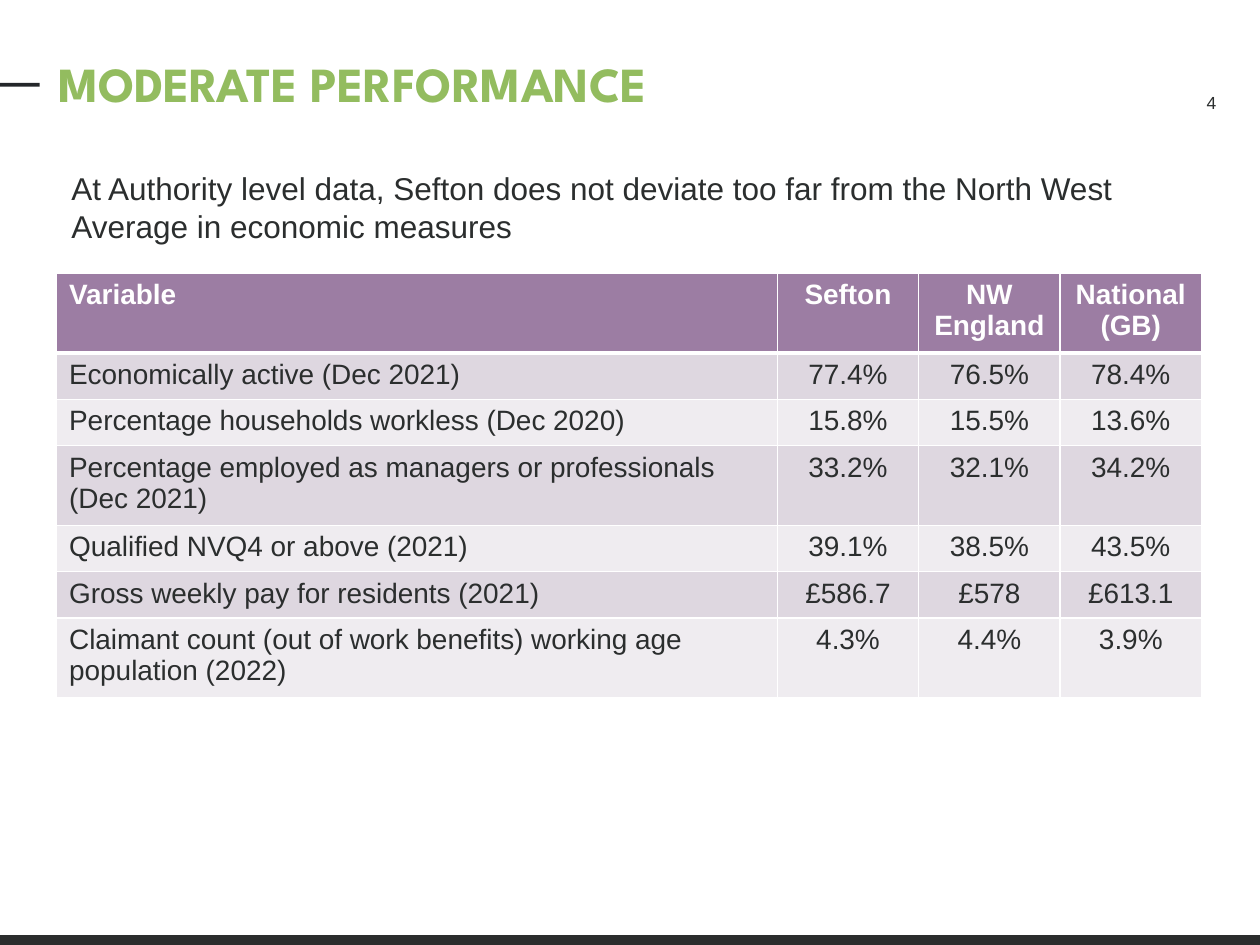
from lxml import etree
from pptx import Presentation
from pptx.dml.color import RGBColor
from pptx.enum import shapes, text
from pptx.oxml import ns
from pptx.util import Cm, Pt

WHITE = RGBColor(0xFF, 0xFF, 0xFF)
INK = RGBColor(0x2B, 0x2E, 0x2E)
DASH = RGBColor(0x24, 0x27, 0x2A)
FOOTER = RGBColor(0x2B, 0x2D, 0x2D)
GREEN = RGBColor(0x93, 0xBC, 0x5F)
PURPLE = RGBColor(0x9C, 0x7D, 0xA3)
LILAC = RGBColor(0xDE, 0xD7, 0xE0)
PALE = RGBColor(0xEF, 0xEC, 0xF0)

MEASURES = [
    ("Variable", "Sefton", "NW England", "National (GB)"),
    ("Economically active (Dec 2021)", "77.4%", "76.5%", "78.4%"),
    ("Percentage households workless (Dec 2020)", "15.8%", "15.5%", "13.6%"),
    ("Percentage employed as managers or professionals (Dec 2021)",
     "33.2%", "32.1%", "34.2%"),
    ("Qualified NVQ4 or above (2021)", "39.1%", "38.5%", "43.5%"),
    ("Gross weekly pay for residents (2021)", "£586.7", "£578", "£613.1"),
    ("Claimant count (out of work benefits) working age population (2022)",
     "4.3%", "4.4%", "3.9%"),
]
COLUMN_WIDTHS = [14.53, 2.85, 2.85, 2.85]
ROW_HEIGHTS = [1.5, 0.88, 0.88, 1.5, 0.88, 0.88, 1.5]


def write(frame, words, size, color, align=text.PP_ALIGN.LEFT,
          font="Arial", bold=False):
    paragraph = frame.paragraphs[0]
    paragraph.alignment = align
    run = paragraph.add_run()
    run.text = words
    run.font.name = font
    run.font.size = Pt(size)
    run.font.bold = bold
    run.font.color.rgb = color


def add_title(slide, words):
    title = slide.shapes.title
    title.left, title.top = Cm(1.17), Cm(1.07)
    title.width, title.height = Cm(17.88), Cm(1.19)
    frame = title.text_frame
    frame.margin_left = frame.margin_right = 0
    frame.margin_top = frame.margin_bottom = 0
    frame.vertical_anchor = text.MSO_ANCHOR.MIDDLE
    write(frame, words, 28, GREEN, font="League Spartan", bold=True)


def add_bar(slide, left, top, width, height, color):
    bar = slide.shapes.add_shape(shapes.MSO_SHAPE.RECTANGLE,
                                 Cm(left), Cm(top), Cm(width), Cm(height))
    bar.shadow.inherit = False
    bar.fill.solid()
    bar.fill.fore_color.rgb = color
    bar.line.fill.background()


def add_label(slide, left, top, width, height, words, size,
              align=text.PP_ALIGN.LEFT):
    label = slide.shapes.add_textbox(Cm(left), Cm(top), Cm(width), Cm(height))
    label.text_frame.word_wrap = True
    write(label.text_frame, words, size, INK, align)


def set_borders(cell, bottom):
    properties = cell._tc.get_or_add_tcPr()
    widths = {"lnL": 1, "lnR": 1, "lnT": 1, "lnB": bottom}
    for position, (side, points) in enumerate(widths.items()):
        line = etree.Element(ns.qn(f"a:{side}"), w=str(Pt(points)))
        fill = etree.SubElement(line, ns.qn("a:solidFill"))
        etree.SubElement(fill, ns.qn("a:srgbClr"), val=str(WHITE))
        properties.insert(position, line)


def add_measures(slide):
    frame = slide.shapes.add_table(
        len(MEASURES), len(COLUMN_WIDTHS), Cm(1.14), Cm(5.51),
        Cm(sum(COLUMN_WIDTHS)), Cm(sum(ROW_HEIGHTS)))
    table = frame.table
    for column, width in zip(table.columns, COLUMN_WIDTHS):
        column.width = Cm(width)
    for row, height in zip(table.rows, ROW_HEIGHTS):
        row.height = Cm(height)
    for r, measure in enumerate(MEASURES):
        header = r == 0
        shade = PURPLE if header else (LILAC if r % 2 else PALE)
        for c, words in enumerate(measure):
            cell = table.cell(r, c)
            cell.fill.solid()
            cell.fill.fore_color.rgb = shade
            set_borders(cell, 3 if header else 1)
            write(cell.text_frame, words, 16, WHITE if header else INK,
                  text.PP_ALIGN.CENTER if c else text.PP_ALIGN.LEFT,
                  bold=header)


def main():
    deck = Presentation()
    deck.slide_width, deck.slide_height = Cm(25.4), Cm(19.05)
    slide = deck.slides.add_slide(deck.slide_layouts[5])
    add_bar(slide, 0, 1.67, 0.8, 0.08, DASH)
    add_bar(slide, 0, 18.85, 25.4, 0.2, FOOTER)
    add_title(slide, "MODERATE PERFORMANCE")
    add_label(slide, 19.05, 1.73, 5.72, 1.02, "4", 10, text.PP_ALIGN.RIGHT)
    add_measures(slide)
    add_label(slide, 1.19, 3.28, 23.06, 1.8,
              "At Authority level data, Sefton does not deviate too far from "
              "the North West Average in economic measures", 18)
    deck.save("out.pptx")


if __name__ == "__main__":
    main()
